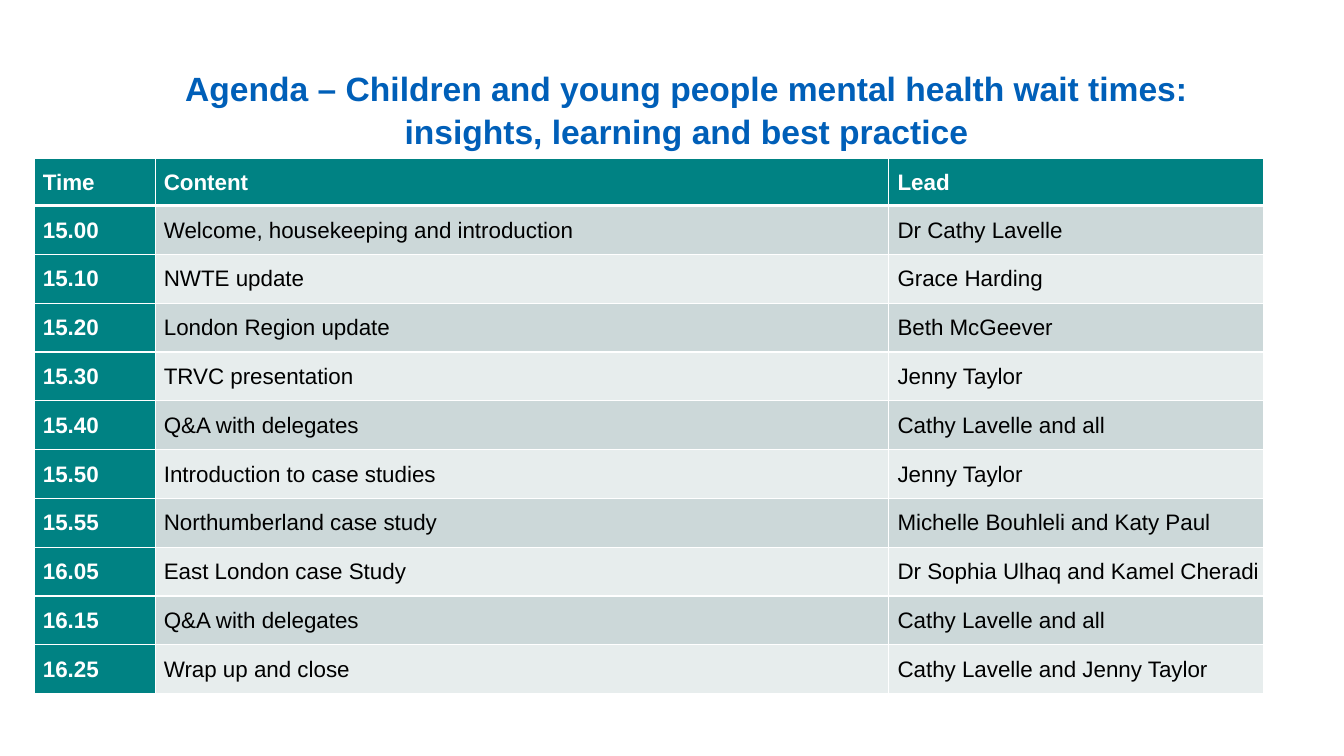
from pptx import Presentation
from pptx import util as u
from pptx.dml.color import RGBColor
from pptx.enum import shapes, text
from pptx.oxml import parse_xml
from pptx.oxml.ns import nsdecls

WHITE = RGBColor(0xFF, 0xFF, 0xFF)
BLACK = RGBColor(0x00, 0x00, 0x00)
BLUE = RGBColor(0x00, 0x5F, 0xB8)
TEAL = RGBColor(0x00, 0x82, 0x83)
BAND_DARK = RGBColor(0xCC, 0xD8, 0xD9)
BAND_LIGHT = RGBColor(0xE7, 0xED, 0xED)

AGENDA = [
    ("Time", "Content", "Lead"),
    ("15.00", "Welcome, housekeeping and introduction", "Dr Cathy Lavelle"),
    ("15.10", "NWTE update", "Grace Harding"),
    ("15.20", "London Region update", "Beth McGeever"),
    ("15.30", "TRVC presentation", "Jenny Taylor"),
    ("15.40", "Q&A with delegates", "Cathy Lavelle and all"),
    ("15.50", "Introduction to case studies", "Jenny Taylor"),
    ("15.55", "Northumberland case study", "Michelle Bouhleli and Katy Paul"),
    ("16.05", "East London case Study", "Dr Sophia Ulhaq and Kamel Cheradi"),
    ("16.15", "Q&A with delegates", "Cathy Lavelle and all"),
    ("16.25", "Wrap up and close", "Cathy Lavelle and Jenny Taylor"),
]
COLUMN_WIDTHS = (3.05, 18.49, 9.45)
HEADER_HEIGHT, ROW_HEIGHT = 1.19, 1.23


def style_run(run, size, color, bold):
    run.font.name = "Arial"
    run.font.size = u.Pt(size)
    run.font.color.rgb = color
    run.font.bold = bold


def add_borders(cell, top, bottom):
    """Draw white cell borders, 1 pt at the sides, top and bottom in points."""
    props = cell._tc.get_or_add_tcPr()
    for place, (side, width) in enumerate(
            (("L", 1), ("R", 1), ("T", top), ("B", bottom))):
        props.insert(place, parse_xml(
            f'<a:ln{side} {nsdecls("a")} w="{u.Pt(width)}"><a:solidFill>'
            f'<a:srgbClr val="{WHITE}"/></a:solidFill></a:ln{side}>'))


prs = Presentation()
prs.slide_width, prs.slide_height = u.Cm(33.87), u.Cm(19.05)
slide = prs.slides.add_slide(prs.slide_layouts[6])

heading = slide.shapes.add_shape(
    shapes.MSO_SHAPE.RECTANGLE, u.Cm(4.37), u.Cm(1.52), u.Cm(25.86), u.Cm(2.31))
heading.shadow.inherit = False
heading.fill.solid()
heading.fill.fore_color.rgb = WHITE
heading.line.fill.background()
heading.text_frame.word_wrap = True
heading.text_frame.vertical_anchor = text.MSO_ANCHOR.TOP
heading.text_frame.text = ("Agenda – Children and young people mental health "
                           "wait times: insights, learning and best practice")
heading_line = heading.text_frame.paragraphs[0]
heading_line.alignment = text.PP_ALIGN.CENTER
heading_line.line_spacing = 1.07
style_run(heading_line.runs[0], 24, BLUE, True)

schedule = slide.shapes.add_table(
    len(AGENDA), len(COLUMN_WIDTHS), u.Cm(0.86), u.Cm(3.99),
    u.Cm(sum(COLUMN_WIDTHS)),
    u.Cm(HEADER_HEIGHT + ROW_HEIGHT * (len(AGENDA) - 1))).table
schedule.first_col = True
for column, width in zip(schedule.columns, COLUMN_WIDTHS):
    column.width = u.Cm(width)

for r, entry in enumerate(AGENDA):
    schedule.rows[r].height = u.Cm(ROW_HEIGHT if r else HEADER_HEIGHT)
    for c, words in enumerate(entry):
        cell = schedule.cell(r, c)
        is_heading = r == 0 or c == 0
        cell.fill.solid()
        cell.fill.fore_color.rgb = (
            TEAL if is_heading else BAND_DARK if r % 2 else BAND_LIGHT)
        add_borders(cell, top=3 if r == 1 else 1, bottom=3 if r == 0 else 1)
        cell.vertical_anchor = text.MSO_ANCHOR.MIDDLE
        cell.margin_left = cell.margin_right = cell.margin_top = u.Cm(0.02)
        cell.margin_bottom = 0
        cell.text_frame.text = words
        paragraph = cell.text_frame.paragraphs[0]
        paragraph._p.get_or_add_pPr().set("marL", str(u.Cm(0.2)))
        style_run(paragraph.runs[0], 16, WHITE if is_heading else BLACK, is_heading)

prs.save("out.pptx")
